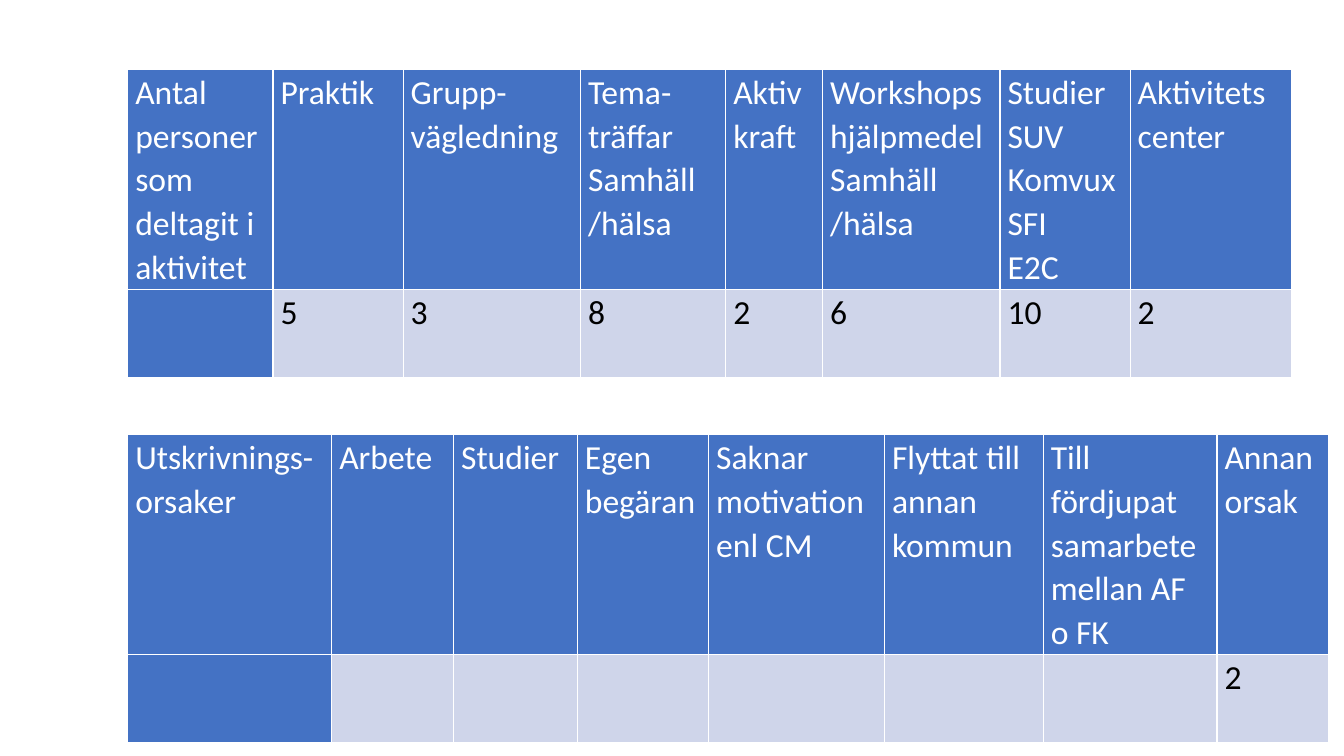
"""Build a slide with two tables: activity participation and discharge reasons."""
import pptx
import pptx.dml.color
import pptx.util
from lxml import etree
from pptx.oxml.ns import qn

Cm = pptx.util.Cm
Pt = pptx.util.Pt
BLUE, PALE, WHITE, BLACK = "4472C4", "CFD5EA", "FFFFFF", "000000"


def color(hex_code):
    return pptx.dml.color.RGBColor.from_string(hex_code)


def add_borders(cell):
    properties = cell._tc.get_or_add_tcPr()
    for side in ("a:lnL", "a:lnR", "a:lnT", "a:lnB"):
        line = etree.SubElement(properties, qn(side), w=str(Pt(1)))
        fill = etree.SubElement(line, qn("a:solidFill"))
        etree.SubElement(fill, qn("a:srgbClr"), val=WHITE)


presentation = pptx.Presentation()
presentation.slide_width = Cm(33.87)
presentation.slide_height = Cm(19.05)
slide = presentation.slides.add_slide(presentation.slide_layouts[6])

activities = [
    ("Antal personer som deltagit i aktivitet", "", 3.66),
    ("Praktik", "5", 3.28),
    ("Grupp-\nvägledning", "3", 4.47),
    ("Tema-\nträffar\nSamhäll\n/hälsa", "8", 3.66),
    ("Aktiv kraft", "2", 2.44),
    ("Workshops\nhjälpmedel\nSamhäll\n/hälsa", "6", 4.47),
    ("Studier\nSUV\nKomvux\nSFI\nE2C", "10", 3.28),
    ("Aktivitets\ncenter", "2", 4.06),
]
discharge_reasons = [
    ("Utskrivnings-\norsaker", "", 5.14),
    ("Arbete", "", 3.07),
    ("Studier", "", 3.12),
    ("Egen begäran", "", 3.31),
    ("Saknar motivation enl CM", "", 4.43),
    ("Flyttat till annan kommun", "", 4.0),
    ("Till fördjupat samarbete mellan AF o FK", "", 4.38),
    ("Annan orsak", "2", 2.82),
]
row_heights = [5.54, 2.22]

for top, columns in ((1.75, activities), (10.95, discharge_reasons)):
    total_width = sum(width for _, _, width in columns)
    table = slide.shapes.add_table(
        2, len(columns), Cm(3.22), Cm(top), Cm(total_width), Cm(sum(row_heights))
    ).table
    for row, height in zip(table.rows, row_heights):
        row.height = Cm(height)
    for column_index, (heading, count, width) in enumerate(columns):
        table.columns[column_index].width = Cm(width)
        for row_index, text in enumerate((heading, count)):
            cell = table.cell(row_index, column_index)
            is_heading = row_index == 0 or column_index == 0
            add_borders(cell)
            cell.fill.solid()
            cell.fill.fore_color.rgb = color(BLUE if is_heading else PALE)
            cell.margin_left = cell.margin_right = Cm(0.19)
            cell.margin_top = cell.margin_bottom = 0
            cell.text = text
            for paragraph in cell.text_frame.paragraphs:
                paragraph.line_spacing = 1.07
                paragraph.font.name = "Calibri"
                paragraph.font.size = Pt(24)
                paragraph.font.bold = False
                paragraph.font.color.rgb = color(WHITE if is_heading else BLACK)

presentation.save("out.pptx")
